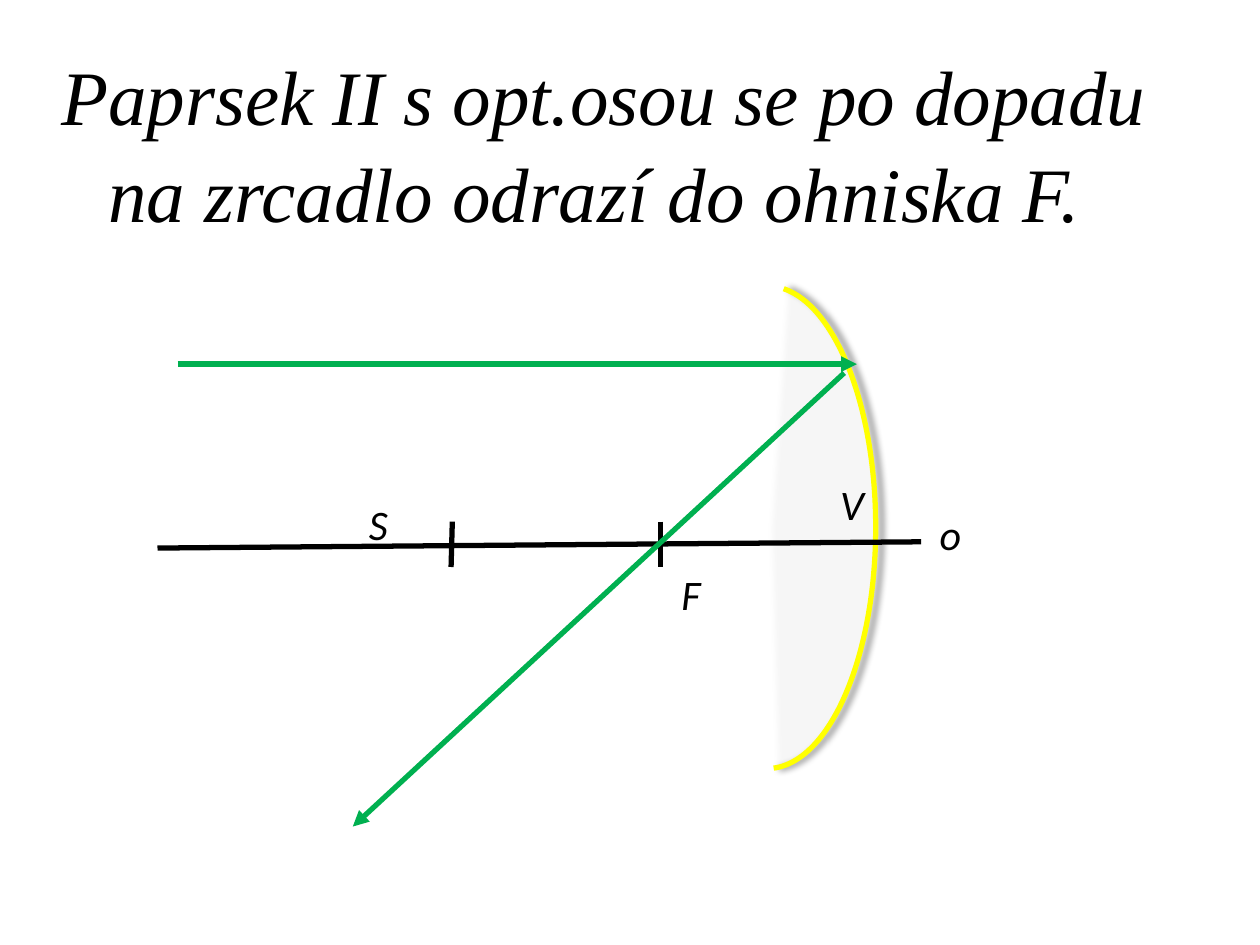
from math import atan2, degrees

from lxml import etree
from pptx import Presentation
from pptx import util as u
from pptx.dml.color import RGBColor
from pptx.enum import shapes, text
from pptx.oxml.ns import qn

THEME = {
    "ink": "000000", "ray": "00B050", "mirror": "FFFF00", "glass": "FFFFFF",
    "title": {"name": "Times New Roman", "size": u.Pt(44), "italic": True},
    "label": {"name": "Calibri", "size": u.Pt(24), "italic": True},
    "stroke": u.Pt(3), "glass_alpha": 10, "shadow_alpha": 40,
}
WIDTH, HEIGHT = 10, 7.5

TITLE = "Paprsek II s opt.osou se po dopadu na zrcadlo odrazí do ohniska F. "
TITLE_BOX = (0.31, 0.31, 8.97, 1.61)

MIRROR_BOX = (5.23, 2.27, 1.72, 3.83)
MIRROR_ENDS = [(6.22, 2.29), (6.14, 6.09)]

# start, end, colour, arrowhead
TICK_TOP, TICK_BOTTOM = 4.14, 4.5
LINES = [
    ((1.25, 4.35), (7.31, 4.3), "ink", False),
    ((5.24, TICK_TOP), (5.24, TICK_BOTTOM), "ink", False),
    ((3.59, TICK_TOP), (3.58, TICK_BOTTOM), "ink", False),
    ((1.41, 2.89), (6.8, 2.89), "ray", True),
    ((6.7, 2.96), (2.8, 6.56), "ray", True),
]

# text, left, top, width, wrap
LABEL_HEIGHT = 0.5
LABELS = [
    ("o", 7.36, 3.99, 0.37, False),
    ("F", 5.31, 4.46, 0.23, True),
    ("S", 2.83, 3.91, 0.39, True),
    ("V", 6.57, 3.75, 0.32, True),
]


def color(name):
    return RGBColor.from_string(THEME[name])


def inches(values):
    return [u.Inches(value) for value in values]


def add_text(slide, content, box, style, wrap=True, **paragraph_format):
    shape = slide.shapes.add_textbox(*inches(box))
    shape.text_frame.word_wrap = wrap
    paragraph = shape.text_frame.paragraphs[0]
    for name, value in paragraph_format.items():
        setattr(paragraph, name, value)
    run = paragraph.add_run()
    run.text = content
    for name, value in THEME[style].items():
        setattr(run.font, name, value)
    run.font.color.rgb = color("ink")
    return shape


def add_line(slide, start, end, color_name, arrow):
    line = slide.shapes.add_connector(
        shapes.MSO_CONNECTOR.STRAIGHT, *inches(start + end))
    line.line.color.rgb = color(color_name)
    line.line.width = THEME["stroke"]
    if arrow:
        etree.SubElement(line.line._get_or_add_ln(), qn("a:tailEnd"), type="triangle")
    etree.SubElement(line._element.spPr, qn("a:effectLst"))


def add_alpha(color_element, percent):
    etree.SubElement(color_element, qn("a:alpha"), val=str(percent * 1000))


def add_mirror(slide):
    """Arc of an ellipse, with a faint fill and a soft shadow to the right."""
    left, top, width, height = MIRROR_BOX
    mirror = slide.shapes.add_shape(shapes.MSO_SHAPE.ARC, *inches(MIRROR_BOX))
    for index, (x, y) in enumerate(MIRROR_ENDS):
        angle = degrees(atan2(y - top - height / 2, x - left - width / 2)) % 360
        mirror.adjustments[index] = angle * 60000 / 100000
    mirror.fill.solid()
    mirror.fill.fore_color.rgb = color("glass")
    mirror.line.color.rgb = color("mirror")
    mirror.line.width = THEME["stroke"]
    mirror.shadow.inherit = False

    properties = mirror._element.spPr
    add_alpha(properties.find(qn("a:solidFill"))[0], THEME["glass_alpha"])
    shadow = etree.SubElement(
        properties.find(qn("a:effectLst")), qn("a:outerShdw"),
        blurRad=str(u.Pt(4)), dist=str(u.Pt(3)), dir="0", rotWithShape="0")
    shade = etree.SubElement(shadow, qn("a:srgbClr"), val=THEME["ink"])
    add_alpha(shade, THEME["shadow_alpha"])


def main():
    presentation = Presentation()
    presentation.slide_width, presentation.slide_height = inches((WIDTH, HEIGHT))
    slide = presentation.slides.add_slide(presentation.slide_layouts[6])

    title = add_text(slide, TITLE, TITLE_BOX, "title",
                     alignment=text.PP_ALIGN.CENTER, line_spacing=1.05)
    title.text_frame.vertical_anchor = text.MSO_ANCHOR.MIDDLE
    add_mirror(slide)
    for line in LINES:
        add_line(slide, *line)
    for content, left, top, width, wrap in LABELS:
        label = add_text(slide, content, (left, top, width, LABEL_HEIGHT), "label", wrap)
        label.text_frame.auto_size = text.MSO_AUTO_SIZE.SHAPE_TO_FIT_TEXT

    presentation.save("out.pptx")


if __name__ == "__main__":
    main()
